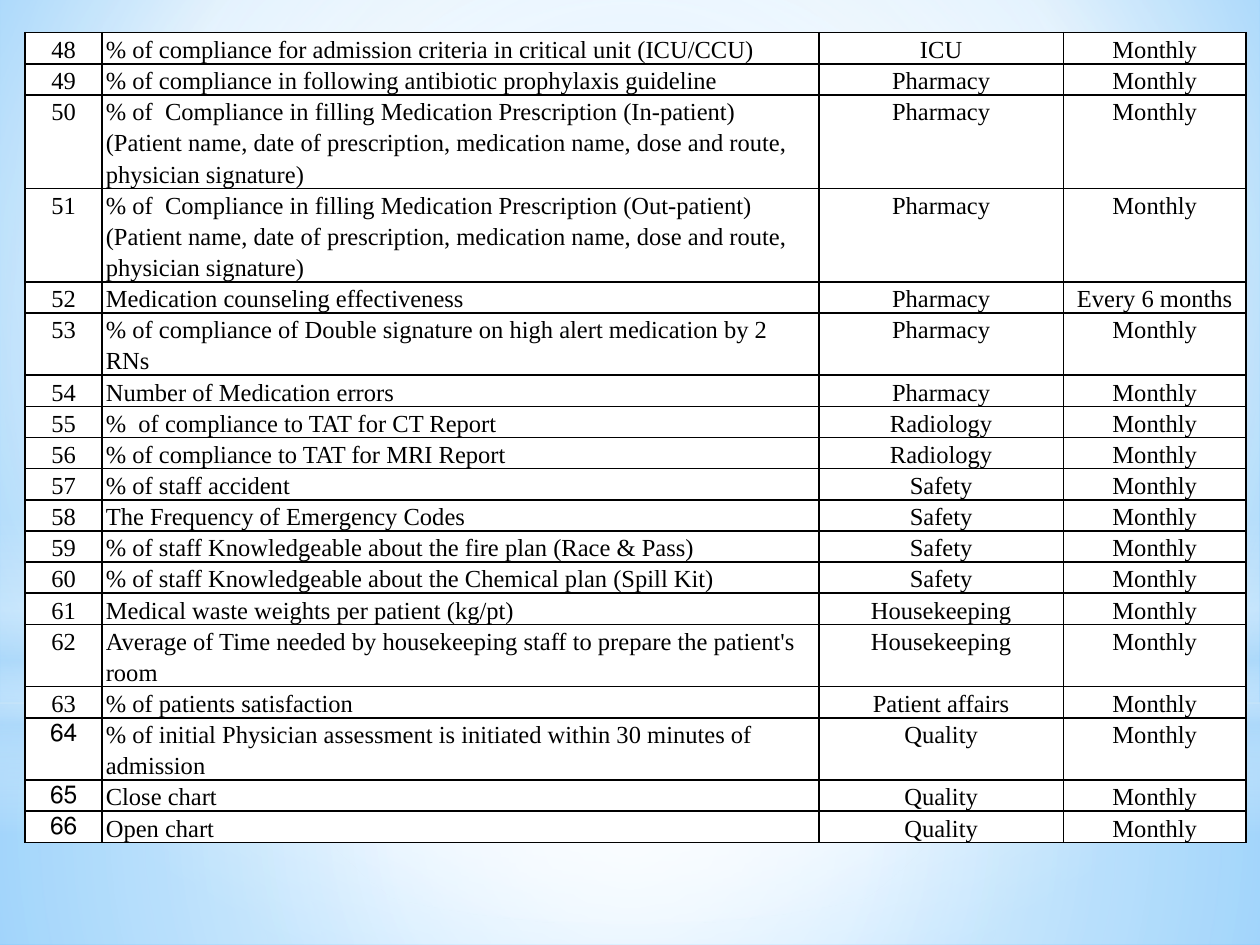
from lxml import etree
from pptx import Presentation
from pptx.dml.color import RGBColor
from pptx.enum.shapes import MSO_SHAPE
from pptx.enum.text import PP_ALIGN
from pptx.oxml.ns import qn
from pptx.util import Inches, Pt

RECT, OVAL = MSO_SHAPE.RECTANGLE, MSO_SHAPE.OVAL
LEFT, CENTER = PP_ALIGN.LEFT, PP_ALIGN.CENTER
BLACK = RGBColor(0x00, 0x00, 0x00)
WHITE = RGBColor(0xFF, 0xFF, 0xFF)
PALE_BLUE = RGBColor(0xB4, 0xDC, 0xFA)
SKY_BLUE = RGBColor(0x9E, 0xD5, 0xFF)
DEEP_BLUE = RGBColor(0x5B, 0xB9, 0xFF)
SERIF, SANS = "Times New Roman", "Calibri"
CENTRE_FOCUS = (50, 50, 50, 50)


def set_gradient(fill, owner, stops, focus=None):
    """Stops are (position %, colour, opacity %). Circular around focus
    (left, top, right, bottom insets in %), or top to bottom without one."""
    fill.gradient()
    grad = next(owner.iter(qn("a:gradFill")))
    for child in list(grad):
        grad.remove(child)
    stop_list = etree.SubElement(grad, qn("a:gsLst"))
    for position, color, opacity in stops:
        stop = etree.SubElement(stop_list, qn("a:gs"), pos=str(position * 1000))
        clr = etree.SubElement(stop, qn("a:srgbClr"), val=str(color))
        if opacity < 100:
            etree.SubElement(clr, qn("a:alpha"), val=str(opacity * 1000))
    if focus:
        circle = etree.SubElement(grad, qn("a:path"), path="circle")
        insets = {side: str(v * 1000) for side, v in zip("ltrb", focus)}
        etree.SubElement(circle, qn("a:fillToRect"), **insets)
    else:
        etree.SubElement(grad, qn("a:lin"), ang="5400000", scaled="0")


def set_borders(cell, color, width):
    tc_pr = cell._tc.get_or_add_tcPr()
    for i, side in enumerate(("lnL", "lnR", "lnT", "lnB")):
        ln = etree.Element(qn(f"a:{side}"), w=str(width))
        solid = etree.SubElement(ln, qn("a:solidFill"))
        etree.SubElement(solid, qn("a:srgbClr"), val=str(color))
        tc_pr.insert(i, ln)


prs = Presentation()
prs.slide_width, prs.slide_height = Inches(10), Inches(7.5)
s = prs.slides.add_slide(prs.slide_layouts[6])

# Background
set_gradient(s.background.fill, s.element,
             [(0, SKY_BLUE, 100), (60, WHITE, 100), (100, DEEP_BLUE, 100)],
             (20, 10, 20, 60))

# Full-width light effects: shape, top, height, stops, focus
glows = [
    (RECT, 5.58, 1.92,
     [(0, WHITE, 91), (37, WHITE, 76), (100, PALE_BLUE, 79)], CENTRE_FOCUS),
    (RECT, 0, 5.58,
     [(0, WHITE, 89), (48, WHITE, 62), (100, PALE_BLUE, 79)], CENTRE_FOCUS),
    (RECT, 4.12, 2.5,
     [(0, WHITE, 0), (29, WHITE, 30), (45, PALE_BLUE, 40),
      (55, WHITE, 26), (65, PALE_BLUE, 60), (100, WHITE, 0)], None),
    (OVAL, 1.75, 5.58, [(0, WHITE, 100), (56, WHITE, 0)], CENTRE_FOCUS),
]
for kind, top, height, stops, focus in glows:
    sp = s.shapes.add_shape(kind, 0, Inches(top), prs.slide_width, Inches(height))
    sp.shadow.inherit = False
    sp.line.fill.background()
    set_gradient(sp.fill, sp.element, stops, focus)

# Indicator table: indicator, department, number of text lines
FIRST_NUMBER = 48
FIRST_RTL_NUMBER = 64
PRESCRIPTION = ("% of  Compliance in filling Medication Prescription ({}) "
                "(Patient name, date of prescription, medication name, "
                "dose and route, physician signature)")
indicators = [
    ("% of compliance for admission criteria in critical unit (ICU/CCU)", "ICU", 1),
    ("% of compliance in following antibiotic prophylaxis guideline", "Pharmacy", 1),
    (PRESCRIPTION.format("In-patient"), "Pharmacy", 3),
    (PRESCRIPTION.format("Out-patient"), "Pharmacy", 3),
    ("Medication counseling effectiveness", "Pharmacy", 1),
    ("% of compliance of Double signature on high alert medication by 2 RNs",
     "Pharmacy", 2),
    ("Number of Medication errors", "Pharmacy", 1),
    ("%  of compliance to TAT for CT Report", "Radiology", 1),
    ("% of compliance to TAT for MRI Report", "Radiology", 1),
    ("% of staff accident", "Safety", 1),
    ("The Frequency of Emergency Codes", "Safety", 1),
    ("% of staff Knowledgeable about the fire plan (Race & Pass)", "Safety", 1),
    ("% of staff Knowledgeable about the Chemical plan (Spill Kit)", "Safety", 1),
    ("Medical waste weights per patient (kg/pt)", "Housekeeping", 1),
    ("Average of Time needed by housekeeping staff to prepare the patient's room",
     "Housekeeping", 2),
    ("% of patients satisfaction", "Patient affairs", 1),
    ("% of initial Physician assessment is initiated within 30 minutes of admission",
     "Quality", 2),
    ("Close chart", "Quality", 1),
    ("Open chart", "Quality", 1),
]
frequencies = {52: "Every 6 months"}
col_widths = [0.61, 5.69, 1.94, 1.45]
LINE_HEIGHT = 0.1  # minimum; rows grow to fit their text

total_lines = sum(lines for _, _, lines in indicators)
table = s.shapes.add_table(
    len(indicators), len(col_widths), Inches(0.2), Inches(0.26),
    Inches(sum(col_widths)), Inches(LINE_HEIGHT * total_lines)).table
table.first_row = table.horz_banding = False
for col, width in zip(table.columns, col_widths):
    col.width = Inches(width)

for i, (indicator, department, lines) in enumerate(indicators):
    number = FIRST_NUMBER + i
    table.rows[i].height = Inches(LINE_HEIGHT * lines)
    texts = [str(number), indicator, department, frequencies.get(number, "Monthly")]
    for j, text in enumerate(texts):
        cell = table.cell(i, j)
        cell.margin_left = cell.margin_right = Inches(0.03)
        cell.margin_top = cell.margin_bottom = 0
        cell.fill.solid()
        cell.fill.fore_color.rgb = WHITE
        set_borders(cell, BLACK, Pt(1))
        p = cell.text_frame.paragraphs[0]
        p.alignment = LEFT if j == 1 else CENTER
        p.line_spacing = 1.15
        rtl = j == 0 and number >= FIRST_RTL_NUMBER
        if rtl:
            p._p.get_or_add_pPr().set("rtl", "1")
        pieces = zip(text, (SANS, SERIF)) if rtl else [(text, SERIF)]
        for piece, font in pieces:
            r = p.add_run()
            r.text = piece
            r.font.name = font
            r.font.size = Pt(14)
            r.font.color.rgb = BLACK

prs.save("out.pptx")
